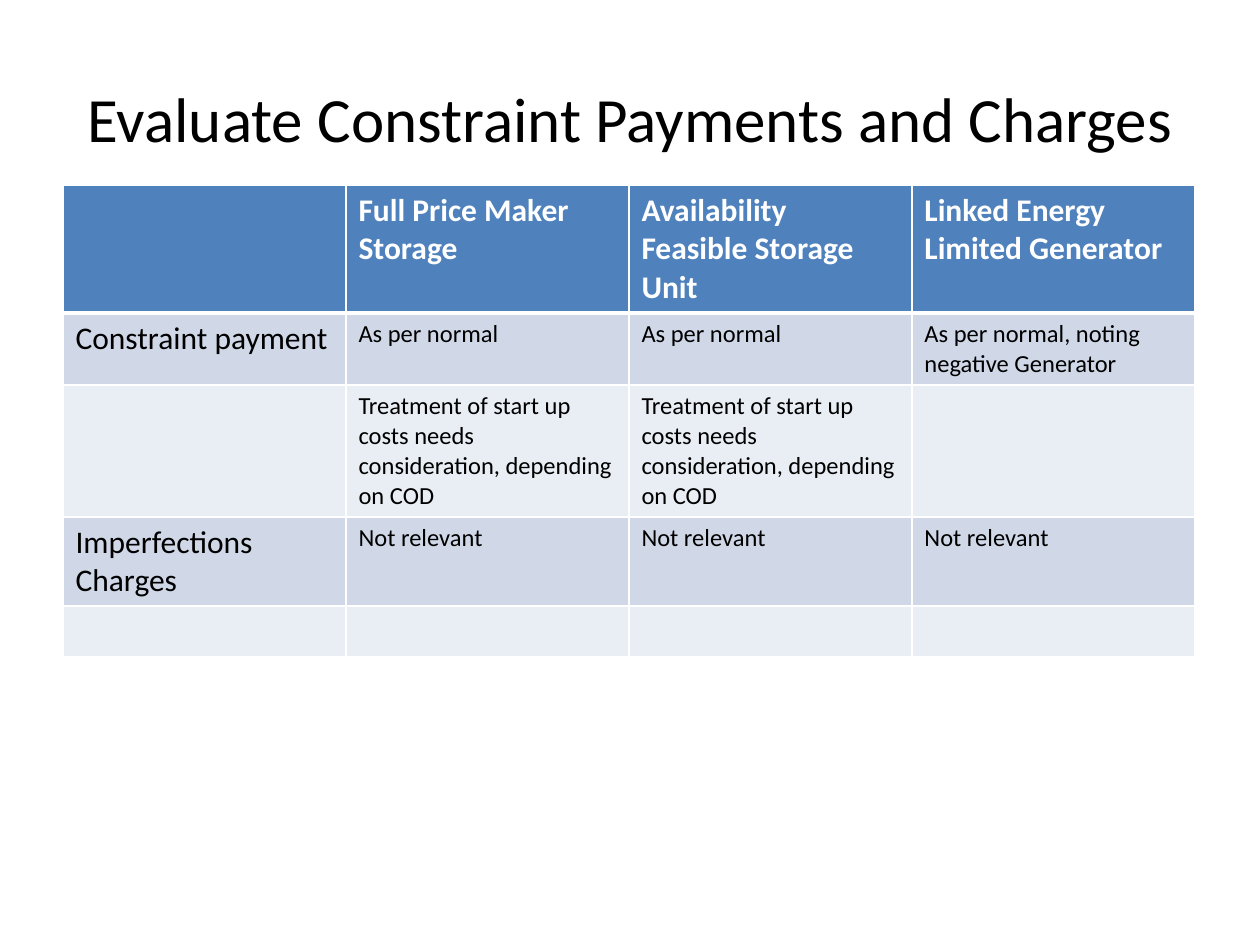
"""Build the constraint payments and charges slide."""
from typing import NamedTuple

from lxml.etree import SubElement
from pptx import Presentation
from pptx.dml.color import RGBColor
from pptx.enum.text import MSO_ANCHOR, PP_ALIGN
from pptx.oxml.ns import qn
from pptx.util import Emu, Pt

SCALE = 914400 // 126
FONT = "Calibri"
WHITE, BLACK = "FFFFFF", "000000"
HEADER, DARK_BAND, LIGHT_BAND = "4F81BD", "D0D8E8", "E9EDF4"
COL_WIDTH = 1134 // 4


class Row(NamedTuple):
    """One table row: its height in px, fill and cell texts."""
    height: int
    fill: str
    texts: tuple[str, str, str, str]


START_UP = "Treatment of start up costs needs consideration, depending on COD"
ROWS = [
    Row(128, HEADER, ("", "Full Price Maker Storage", "Availability Feasible Storage Unit",
                      "Linked Energy Limited Generator")),
    Row(72, DARK_BAND, ("Constraint payment", "As per normal", "As per normal",
                        "As per normal, noting negative Generator")),
    Row(132, LIGHT_BAND, ("", START_UP, START_UP, "")),
    Row(89, DARK_BAND, ("Imperfections Charges",) + ("Not relevant",) * 3),
    Row(51, LIGHT_BAND, ("",) * 4),
]


def px(n: int) -> Emu:
    """Turn px into EMU."""
    return Emu(n * SCALE)


def rgb(value: str) -> RGBColor:
    """Turn a hex string into a colour."""
    return RGBColor.from_string(value)


def write(p, text: str, color: str, **formats) -> None:
    """Add a run of text with its font format."""
    r = p.add_run()
    r.text = text
    r.font.color.rgb = rgb(color)
    for name, value in {"name": FONT, **formats}.items():
        setattr(r.font, name, value)


def set_borders(cell, widths: dict[str, int]) -> None:
    """Draw white cell borders with widths in points."""
    tc_pr = cell._tc.get_or_add_tcPr()
    for side, width in widths.items():
        ln = SubElement(tc_pr, qn(f"a:ln{side}"), w=str(Pt(width)))
        fill = SubElement(ln, qn("a:solidFill"))
        SubElement(fill, qn("a:srgbClr"), val=WHITE)


def add_title(s, text: str) -> None:
    """Add the centred slide title."""
    tf = s.shapes.add_textbox(px(63), px(38), px(1134), px(158)).text_frame
    tf.word_wrap = True
    tf.vertical_anchor = MSO_ANCHOR.MIDDLE
    p = tf.paragraphs[0]
    p.alignment = PP_ALIGN.CENTER
    write(p, text, BLACK, size=Pt(36))


def add_grid(s, rows: list[Row]) -> None:
    """Add the table with a header row and banded body rows."""
    height = sum(row.height for row in rows)
    table = s.shapes.add_table(len(rows), 4, px(63), px(185), px(4 * COL_WIDTH), px(height)).table
    for col in table.columns:
        col.width = px(COL_WIDTH)
    for i, row in enumerate(rows):
        table.rows[i].height = px(row.height)
        for j, text in enumerate(row.texts):
            cell = table.cell(i, j)
            set_borders(cell, {"L": 1, "R": 1, "T": 3 if i == 1 else 1, "B": 3 if i == 0 else 1})
            cell.fill.solid()
            cell.fill.fore_color.rgb = rgb(row.fill)
            if text:
                write(cell.text_frame.paragraphs[0], text, WHITE if i == 0 else BLACK,
                      size=Pt(18 if i == 0 or j == 0 else 14), bold=i == 0)


def main() -> None:
    """Build and save the slide."""
    prs = Presentation()
    prs.slide_width, prs.slide_height = px(1260), px(945)
    s = prs.slides.add_slide(prs.slide_layouts[6])
    add_title(s, "Evaluate Constraint Payments and Charges")
    add_grid(s, ROWS)
    prs.save("out.pptx")


if __name__ == "__main__":
    main()
